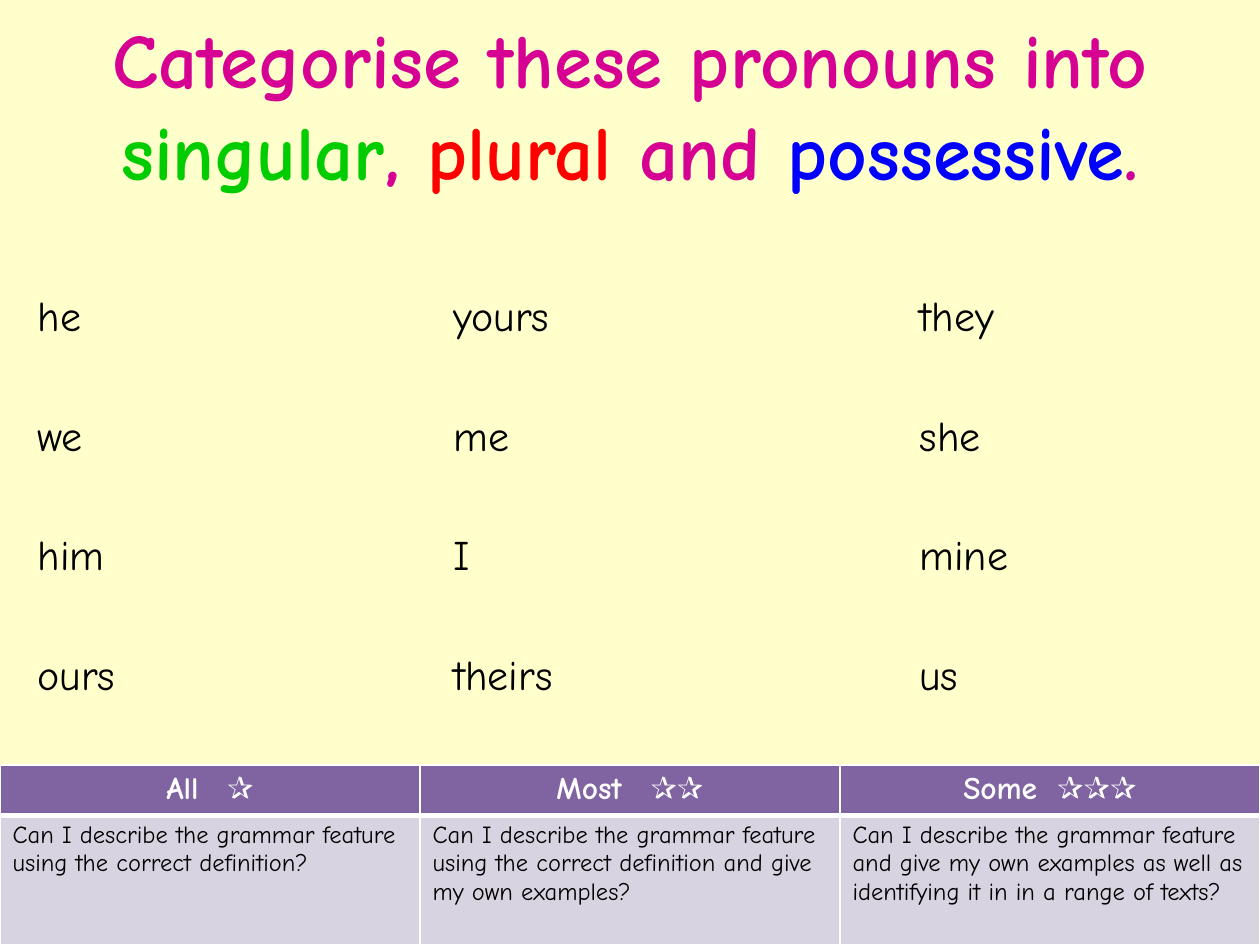
from lxml.etree import SubElement as Sub
from pptx import Presentation
from pptx.dml.color import RGBColor as RGB
from pptx.enum.text import MSO_ANCHOR as Anchor, PP_ALIGN as Align
from pptx.oxml.ns import qn
from pptx.util import Inches, Pt

WIDE, HIGH = Inches(10), Inches(7.5)
FONT = "Comic Neue"
CREAM = RGB(0xFF, 0xFF, 0xCC)
PINK = RGB(0xD6, 0x00, 0x93)
ROSE = RGB(0xCC, 0x00, 0x99)
GREEN = RGB(0x00, 0xCC, 0x00)
RED = RGB(0xFF, 0x00, 0x00)
BLUE = RGB(0x00, 0x00, 0xFF)
BLACK = RGB(0x00, 0x00, 0x00)
WHITE = RGB(0xFF, 0xFF, 0xFF)
PURPLE = RGB(0x80, 0x64, 0xA2)
LILAC = RGB(0xD8, 0xD3, 0xE0)

TITLE = [
    ("Categorise these pronouns into ", PINK),
    ("singular", GREEN),
    (", ", PINK),
    ("plural", RED),
    (" and ", PINK),
    ("possessive", BLUE),
    (".", ROSE),
]
WORDS = [
    (0.02, ["he", "we", "him", "ours"]),
    (0.35, ["yours", "me", "I", "theirs"]),
    (0.72, ["they", "she", "mine", "us"]),
]
# Level, stars, extra width of the gap between them in points, question
GOALS = [
    ("All", "✰", 10,
     "Can I describe the grammar feature using the correct definition?"),
    ("Most", "✰✰", 10,
     "Can I describe the grammar feature using the correct definition "
     "and give my own examples?"),
    ("Some", "✰✰✰", 5,
     "Can I describe the grammar feature and give my own examples "
     "as well as identifying it in in a range of texts?"),
]


def add_run(para, text, size, color, bold=False):
    run = para.add_run()
    run.text = text
    font = run.font
    font.name, font.size, font.bold = FONT, Pt(size), bold
    font.color.rgb = color
    return run


def add_box(slide, left, top, width, height):
    """Add a wrapping text box placed by shares of the slide's size."""
    box = slide.shapes.add_textbox(
        int(WIDE * left), int(HIGH * top), int(WIDE * width), int(HIGH * height))
    box.text_frame.word_wrap = True
    return box.text_frame


def add_title(slide):
    frame = add_box(slide, 0, 0, 1, 0.22)
    frame.vertical_anchor = Anchor.MIDDLE
    para = frame.paragraphs[0]
    para.alignment = Align.CENTER
    for text, color in TITLE:
        add_run(para, text, 44, color, True)


def add_words(slide, left, words):
    frame = add_box(slide, left, 0.3, 0.23, 0.65)
    for row, word in enumerate(words):
        para = frame.add_paragraph() if row else frame.paragraphs[0]
        para.space_before = Pt(39.5 if row else 4.8)
        add_run(para, word, 24, BLACK)


def style_cell(cell, fill, edges):
    """Draw white edges, given as widths in points, then fill the cell."""
    props = cell._tc.get_or_add_tcPr()
    for side, width in zip("LRTB", edges):
        line = Sub(props, qn(f"a:ln{side}"), w=str(Pt(width)))
        Sub(Sub(line, qn("a:solidFill")), qn("a:srgbClr"), val=str(WHITE))
    cell.fill.solid()
    cell.fill.fore_color.rgb = fill


def add_goals(slide):
    table = slide.shapes.add_table(
        2, len(GOALS), 0, Inches(6.07), WIDE, Inches(1.41)).table
    table.rows[0].height, table.rows[1].height = Inches(0.38), Inches(1.03)
    for col, (level, stars, gap, goal) in enumerate(GOALS):
        head, body = table.cell(0, col), table.cell(1, col)
        style_cell(head, PURPLE, (1, 1, 1, 3))
        style_cell(body, LILAC, (1, 1, 3, 1))
        para = head.text_frame.paragraphs[0]
        para.alignment = Align.CENTER
        add_run(para, level, 18, WHITE, True)
        space = add_run(para, " ", 18, WHITE, True)
        space.font._element.set("spc", str(gap * 100))
        add_run(para, stars, 18, WHITE, True)
        add_run(body.text_frame.paragraphs[0], goal, 14, BLACK)


def main():
    deck = Presentation()
    deck.slide_width, deck.slide_height = WIDE, HIGH
    slide = deck.slides.add_slide(deck.slide_layouts[6])
    back = slide.background.fill
    back.solid()
    back.fore_color.rgb = CREAM
    add_title(slide)
    for left, words in WORDS:
        add_words(slide, left, words)
    add_goals(slide)
    deck.save("out.pptx")


if __name__ == "__main__":
    main()
